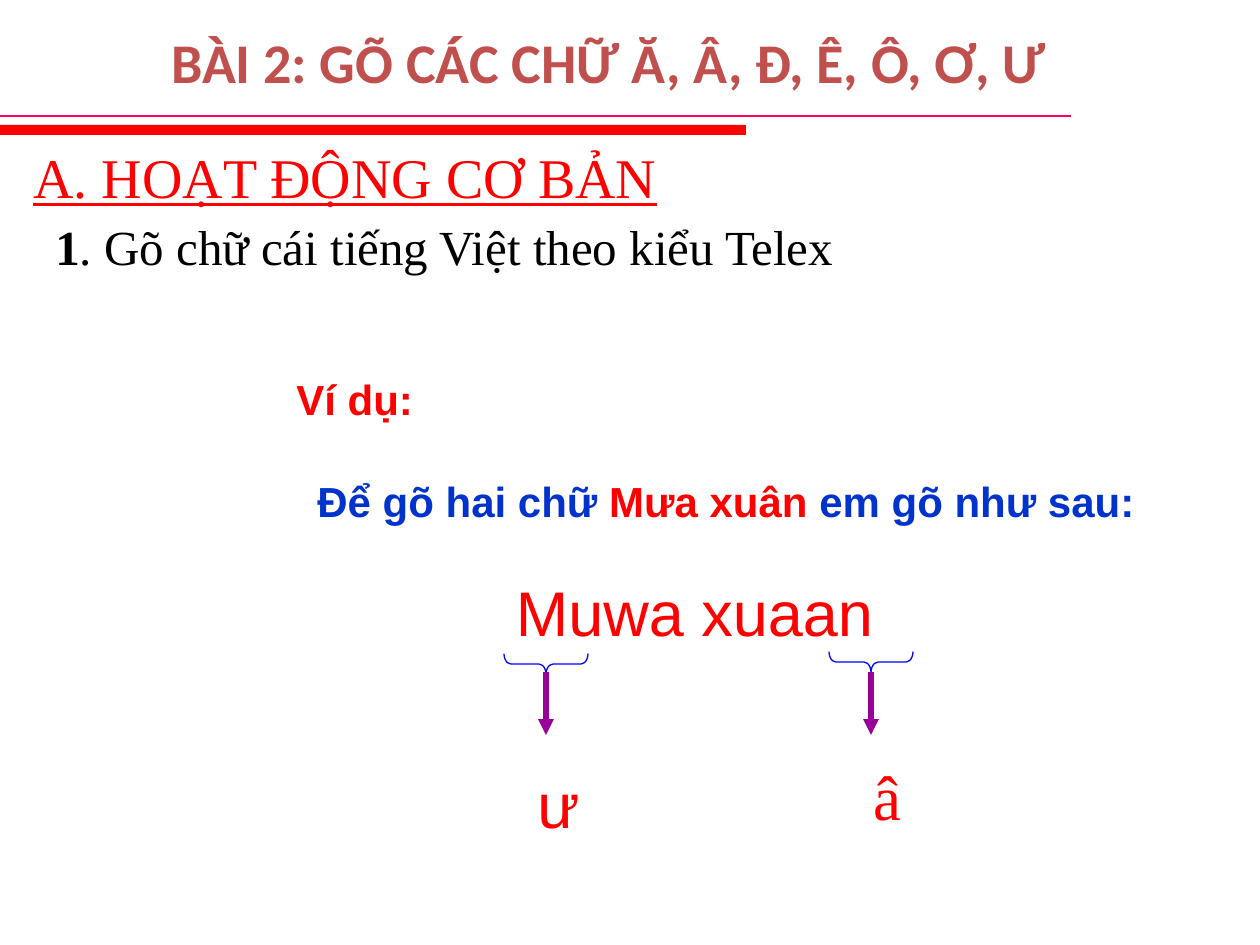
from lxml import etree
from pptx import Presentation
from pptx.dml.color import RGBColor
from pptx.enum.shapes import MSO_CONNECTOR, MSO_SHAPE
from pptx.enum.text import PP_ALIGN
from pptx.oxml.ns import qn
from pptx.util import Pt

PX = 914400 / 126
LEFT, CENTER, JUSTIFY = PP_ALIGN.LEFT, PP_ALIGN.CENTER, PP_ALIGN.JUSTIFY
STRAIGHT = MSO_CONNECTOR.STRAIGHT
RED, BLUE, BLACK = "FF0000", "0033CC", "000000"
ARIAL, TIMES = "Arial", "Times New Roman"


def px(*lengths):
    return [round(length * PX) for length in lengths]


def color(hex_text):
    return RGBColor.from_string(hex_text)


deck = Presentation()
deck.slide_width, deck.slide_height = px(1260, 945)
page = deck.slides.add_slide(deck.slide_layouts[6])

# Text: place, wrap, alignment, font, size, runs of (text, colour, bold, underline)
texts = [
    ((69, 21, 1079, 81), False, CENTER, "Calibri", 32,
     [("BÀI 2: GÕ CÁC CHỮ Ă, Â, Đ, Ê, Ô, Ơ, Ư", "C0504D", True, False)]),
    ((21, 136, 725, 73), True, LEFT, TIMES, 32,
     [("A. HOẠT ĐỘNG CƠ BẢN", RED, False, True)]),
    ((43, 210, 984, 72), True, LEFT, TIMES, 28,
     [("1", BLACK, True, False),
      (". Gõ chữ cái tiếng Việt theo kiểu Telex", BLACK, False, False)]),
    ((284, 367, 199, 63), True, JUSTIFY, ARIAL, 24,
     [("Ví dụ:", RED, True, False)]),
    ((305, 469, 966, 64), True, LEFT, ARIAL, 24,
     [("Để gõ hai chữ ", BLUE, True, False),
      ("Mưa xuân ", RED, True, False),
      ("em gõ như sau:", BLUE, True, False)]),
    ((401, 567, 587, 89), False, CENTER, ARIAL, 36,
     [("Muwa xuaan", RED, False, False)]),
    ((525, 759, 42, 89), False, CENTER, ARIAL, 36,
     [("ư", RED, False, False)]),
    ((861, 751, 42, 89), False, CENTER, TIMES, 36,
     [("â", RED, False, False)]),
]
for place, wrap, align, font, size, runs in texts:
    box = page.shapes.add_textbox(*px(*place))
    box.text_frame.word_wrap = wrap
    para = box.text_frame.paragraphs[0]
    para.alignment = align
    for text, hue, bold, underline in runs:
        span = para.add_run()
        span.text = text
        span.font.name = font
        span.font.size = Pt(size)
        span.font.bold = bold
        span.font.underline = underline
        span.font.color.rgb = color(hue)

# Red bar under the title
bar = page.shapes.add_shape(MSO_SHAPE.RECTANGLE, *px(0, 125, 746, 10))
bar.shadow.inherit = False
bar.fill.solid()
bar.fill.fore_color.rgb = color(RED)
bar.line.fill.background()

# Braces below the letter pairs, turned to point down
BRACE_DEPTH, BRACE_SPAN = 21, 84
for center_x, center_y in [(546, 664), (871, 662)]:
    brace = page.shapes.add_shape(
        MSO_SHAPE.LEFT_BRACE,
        *px(center_x - BRACE_DEPTH / 2, center_y - BRACE_SPAN / 2, BRACE_DEPTH, BRACE_SPAN))
    brace.rotation = 270
    brace.adjustments[0] = 0.33
    brace.shadow.inherit = False
    brace.fill.background()
    brace.line.color.rgb = color("0000FF")
    brace.line.width = Pt(0.75)

# Title rule and the two arrows: ends, colour, width, arrowhead
lines = [
    ((0, 116, 1071, 116), "FF0066", 0.75, False),
    ((546, 672, 546, 735), "990099", 3, True),
    ((871, 672, 871, 735), "990099", 3, True),
]
for ends, hue, width, has_head in lines:
    line = page.shapes.add_connector(STRAIGHT, *px(*ends))
    line.line.color.rgb = color(hue)
    line.line.width = Pt(width)
    if has_head:
        etree.SubElement(line.line._get_or_add_ln(), qn("a:tailEnd"), type="triangle")
    etree.SubElement(line._element.spPr, qn("a:effectLst"))

deck.save("out.pptx")
